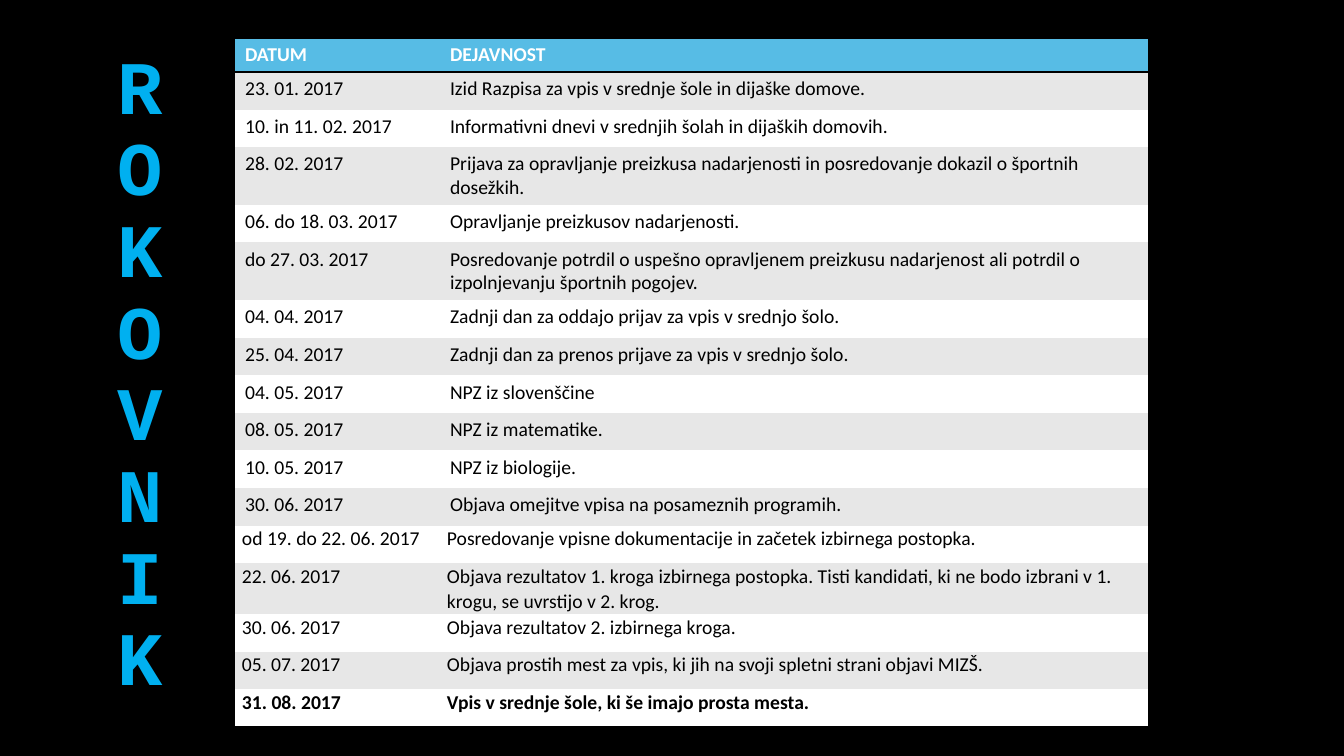
from lxml import etree
from pptx import Presentation
from pptx import util as u
from pptx.dml.color import RGBColor
from pptx.enum import text
from pptx.oxml import ns

PX = 914400 / 100.8
BLACK = RGBColor(0x00, 0x00, 0x00)
WHITE = RGBColor(0xFF, 0xFF, 0xFF)
GREY = RGBColor(0xE7, 0xE7, 0xE7)
HEADER_BLUE = RGBColor(0x57, 0xBC, 0xE5)
TITLE_BLUE = RGBColor(0x00, 0xB0, 0xF0)
PLAIN_STYLE = "{2D5ABB26-0587-4C30-8999-92F81FD0307C}"

HEADER = ("DATUM", "DEJAVNOST")
EVENTS = [
    ("23. 01. 2017", "Izid Razpisa za vpis v srednje šole in dijaške domove."),
    ("10. in 11. 02. 2017", "Informativni dnevi v srednjih šolah in dijaških domovih."),
    ("28. 02. 2017", "Prijava za opravljanje preizkusa nadarjenosti in posredovanje "
                     "dokazil o športnih dosežkih."),
    ("06. do 18. 03. 2017", "Opravljanje preizkusov nadarjenosti."),
    ("do 27. 03. 2017", "Posredovanje potrdil o uspešno opravljenem preizkusu nadarjenost "
                        "ali potrdil o izpolnjevanju športnih pogojev."),
    ("04. 04. 2017", "Zadnji dan za oddajo prijav za vpis v srednjo šolo."),
    ("25. 04. 2017", "Zadnji dan za prenos prijave za vpis v srednjo šolo."),
    ("04. 05. 2017", "NPZ iz slovenščine"),
    ("08. 05. 2017", "NPZ iz matematike."),
    ("10. 05. 2017", "NPZ iz biologije."),
    ("30. 06. 2017", "Objava omejitve vpisa na posameznih programih."),
]
LATE_EVENTS = [
    ("od 19. do 22. 06. 2017", "Posredovanje vpisne dokumentacije in začetek izbirnega postopka."),
    ("22. 06. 2017", "Objava rezultatov 1. kroga izbirnega postopka. Tisti kandidati, ki ne "
                     "bodo izbrani v 1. krogu, se uvrstijo v 2. krog."),
    ("30. 06. 2017", "Objava rezultatov 2. izbirnega kroga."),
    ("05. 07. 2017", "Objava prostih mest za vpis, ki jih na svoji spletni strani objavi MIZŠ."),
    ("31. 08. 2017", "Vpis v srednje šole, ki še imajo prosta mesta."),
]


def px(n):
    return u.Emu(round(n * PX))


def write(tf, words, size=14, font="Calibri", color=BLACK, bold=False, spacing=None):
    p = tf.paragraphs[0]
    p.line_spacing = spacing
    r = p.add_run()
    r.text = words
    r.font.size = u.Pt(size)
    r.font.name = font
    r.font.color.rgb = color
    r.font.bold = bold


def add_border(cell, side):
    """Draw a black 2 pt line on the cell side "T" or "B"."""
    ln = etree.Element(ns.qn(f"a:ln{side}"), w=str(u.Pt(2)))
    fill = etree.SubElement(ln, ns.qn("a:solidFill"))
    etree.SubElement(fill, ns.qn("a:srgbClr"), val=str(BLACK))
    cell._tc.get_or_add_tcPr().insert(0, ln)


def fill_row(table, index, words, fill, borders="", tight=False, **fmt):
    """Write one row; tight rows have narrow side margins and none above or below."""
    for cell, value in zip(table.rows[index].cells, words):
        cell.fill.solid()
        cell.fill.fore_color.rgb = fill
        if tight:
            cell.margin_left = cell.margin_right = px(7)
            cell.margin_top = cell.margin_bottom = 0
        write(cell.text_frame, value, spacing=1.07 if tight else None, **fmt)
        for side in borders:
            add_border(cell, side)


def add_schedule(s):
    events = EVENTS + LATE_EVENTS
    header_h, body_h = 32, 601
    frame = s.shapes.add_table(len(events) + 1, 2, px(235), px(38), px(913), px(header_h + body_h))
    table = frame.table
    table._tbl.tblPr.find(ns.qn("a:tableStyleId")).text = PLAIN_STYLE
    for column, width in zip(table.columns, (205, 708)):
        column.width = px(width)
    for row in table.rows:
        row.height = px(body_h / len(events))
    table.rows[0].height = px(header_h)

    fill_row(table, 0, HEADER, HEADER_BLUE, borders="BT", color=WHITE, bold=True)
    for i, event in enumerate(events, 1):
        last = i == len(events)
        fill_row(table, i, event, GREY if i % 2 else WHITE, borders="B" if last else "",
                 tight=i > len(EVENTS), bold=last)


def add_title(s):
    """The box is one letter wide, so the word wraps into a column."""
    tf = s.shapes.add_textbox(px(108), 0, px(103), px(707)).text_frame
    tf.word_wrap = True
    tf.vertical_anchor = text.MSO_ANCHOR.BOTTOM
    write(tf, "ROKOVNIK", size=54, font="Courier New", color=TITLE_BLUE, bold=True, spacing=0.9)


def main():
    prs = Presentation()
    prs.slide_width, prs.slide_height = px(1344), px(756)
    s = prs.slides.add_slide(prs.slide_layouts[6])
    s.background.fill.solid()
    s.background.fill.fore_color.rgb = BLACK
    add_schedule(s)
    add_title(s)
    prs.save("out.pptx")


if __name__ == "__main__":
    main()
